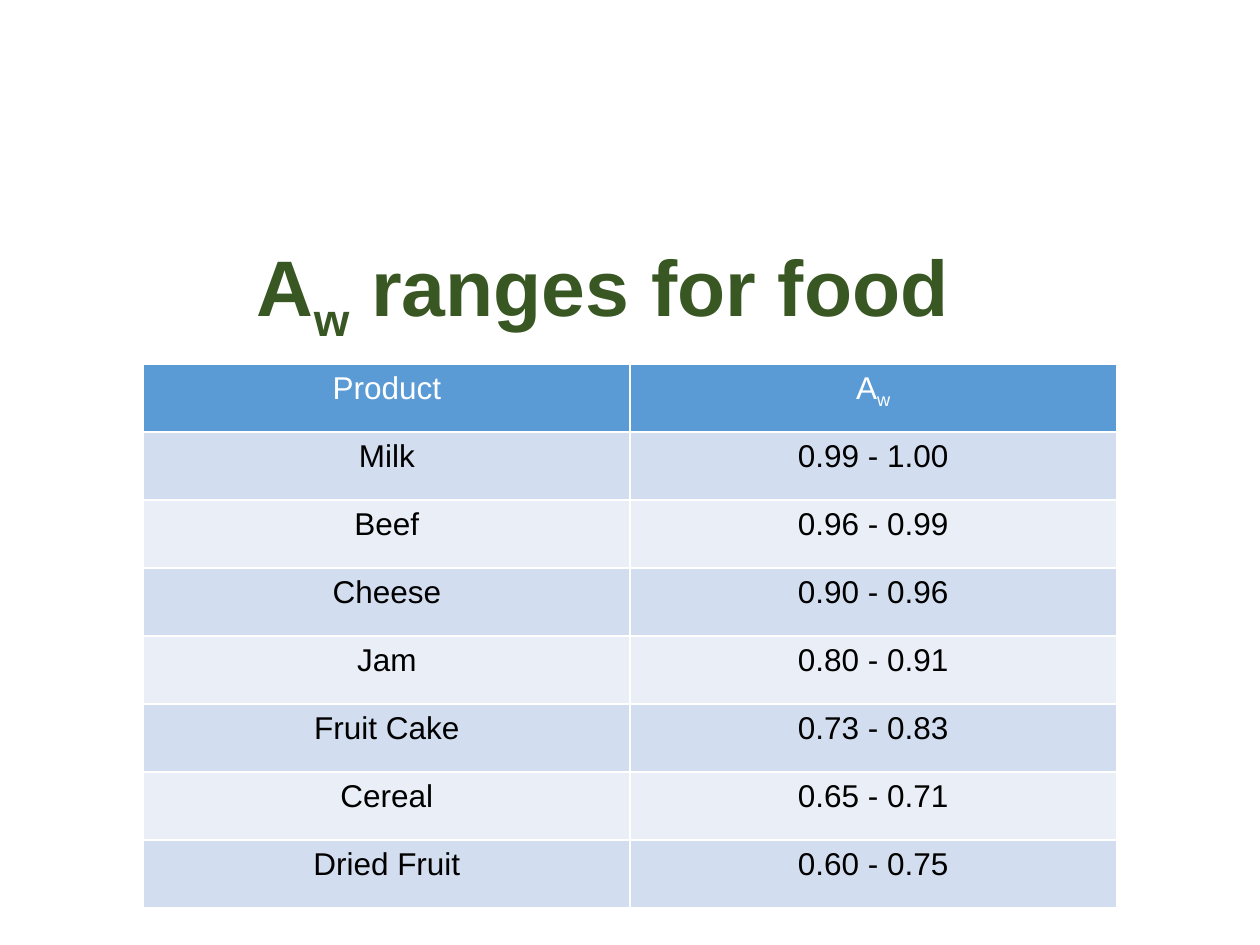
from dataclasses import dataclass

from pptx import Presentation
from pptx.dml.color import RGBColor
from pptx.enum.text import MSO_ANCHOR, MSO_AUTO_SIZE, PP_ALIGN
from pptx.text.text import TextFrame
from pptx.util import Inches, Pt

CENTER = PP_ALIGN.CENTER
MIDDLE = MSO_ANCHOR.MIDDLE
NO_AUTOFIT = MSO_AUTO_SIZE.NONE
TITLE_ONLY_LAYOUT = 5


@dataclass(frozen=True)
class Theme:
    font: str = "Arial"
    title_size: float = 45
    table_size: float = 18
    title_color: str = "385723"
    header_text: str = "FFFFFF"
    body_text: str = "000000"
    header_fill: str = "5B9BD5"
    band_fills: tuple[str, str] = ("D2DEEF", "EAEFF7")


@dataclass(frozen=True)
class Span:
    text: str
    baseline: int = 0


@dataclass(frozen=True)
class FoodRange:
    product: str
    activity: str


@dataclass(frozen=True)
class Box:
    left: float
    top: float
    width: float
    height: float

    def lengths(self) -> tuple[int, int, int, int]:
        return (Inches(self.left), Inches(self.top),
                Inches(self.width), Inches(self.height))


THEME = Theme()
SLIDE_WIDTH, SLIDE_HEIGHT = 10, 7.5
ROW_HEIGHT = 0.54
TABLE_MARGIN = 1.14
TITLE_BOX = Box(0, 1.77, 9.57, 1.02)
WATER_ACTIVITY = [Span("A"), Span("w", -25)]
FOOD_RANGES = [
    FoodRange("Milk", "0.99 - 1.00"),
    FoodRange("Beef", "0.96 - 0.99"),
    FoodRange("Cheese", "0.90 - 0.96"),
    FoodRange("Jam", "0.80 - 0.91"),
    FoodRange("Fruit Cake", "0.73 - 0.83"),
    FoodRange("Cereal", "0.65 - 0.71"),
    FoodRange("Dried Fruit", "0.60 - 0.75"),
]
ROW_COUNT = len(FOOD_RANGES) + 1
TABLE_BOX = Box(TABLE_MARGIN, 2.89, SLIDE_WIDTH - 2 * TABLE_MARGIN,
                ROW_COUNT * ROW_HEIGHT)


def write_text(frame: TextFrame, spans: list[Span], *, size: float, color: str,
               bold: bool = False, line_spacing: float = 1.0) -> None:
    paragraph = frame.paragraphs[0]
    paragraph.alignment = CENTER
    paragraph.line_spacing = line_spacing
    for span in spans:
        run = paragraph.add_run()
        run.text = span.text
        run.font.name = THEME.font
        run.font.size = Pt(size)
        run.font.bold = bold
        run.font.color.rgb = RGBColor.from_string(color)
        if span.baseline:
            run.font._element.set("baseline", str(span.baseline * 1000))


def draw_title(slide) -> None:
    title = slide.shapes.title
    title.left, title.top, title.width, title.height = TITLE_BOX.lengths()
    frame = title.text_frame
    frame.auto_size = NO_AUTOFIT
    frame.word_wrap = True
    frame.vertical_anchor = MIDDLE
    write_text(frame, [*WATER_ACTIVITY, Span(" ranges for food")],
               size=THEME.title_size, color=THEME.title_color,
               bold=True, line_spacing=0.9)


def draw_row(table, row: int, contents: list[list[Span]], *,
             fill: str, color: str) -> None:
    for column, spans in enumerate(contents):
        cell = table.cell(row, column)
        cell.fill.solid()
        cell.fill.fore_color.rgb = RGBColor.from_string(fill)
        write_text(cell.text_frame, spans, size=THEME.table_size, color=color)


def draw_table(slide) -> None:
    table = slide.shapes.add_table(ROW_COUNT, 2, *TABLE_BOX.lengths()).table
    draw_row(table, 0, [[Span("Product")], WATER_ACTIVITY],
             fill=THEME.header_fill, color=THEME.header_text)
    for index, food in enumerate(FOOD_RANGES):
        draw_row(table, index + 1, [[Span(food.product)], [Span(food.activity)]],
                 fill=THEME.band_fills[index % 2], color=THEME.body_text)


def main() -> None:
    presentation = Presentation()
    presentation.slide_width = Inches(SLIDE_WIDTH)
    presentation.slide_height = Inches(SLIDE_HEIGHT)
    layout = presentation.slide_layouts[TITLE_ONLY_LAYOUT]
    slide = presentation.slides.add_slide(layout)
    draw_title(slide)
    draw_table(slide)
    presentation.save("out.pptx")


if __name__ == "__main__":
    main()
